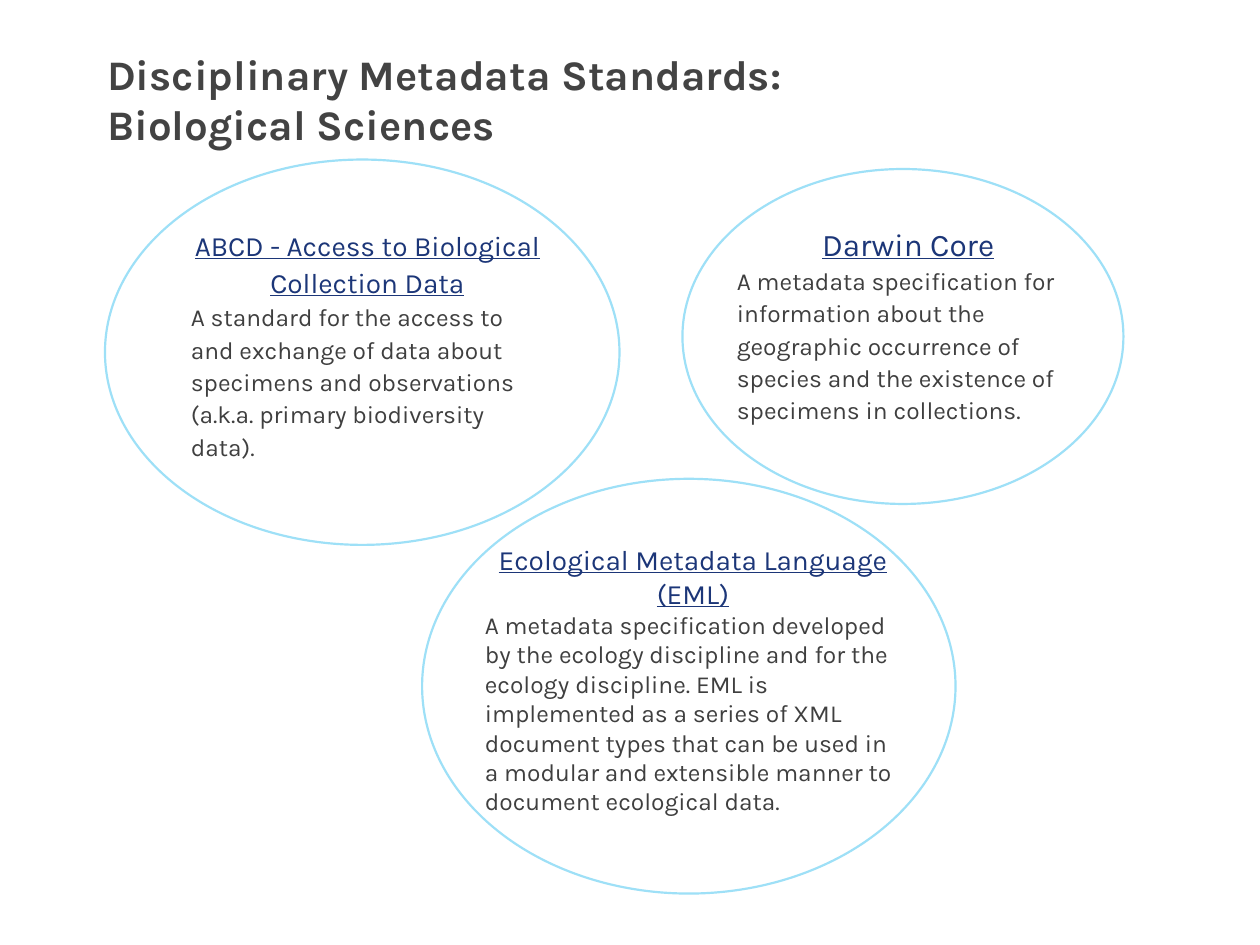
import pptx
import pptx.util
import pptx.dml.color
import pptx.enum.shapes
import pptx.enum.text

RGBColor = pptx.dml.color.RGBColor
ALIGN = pptx.enum.text.PP_ALIGN
GREY = RGBColor(0x43, 0x43, 0x43)
TEXT = RGBColor(0x3F, 0x3F, 0x3F)
NAVY = RGBColor(0x1C, 0x36, 0x78)
SKY = RGBColor(0x9E, 0xE0, 0xF7)

prs = pptx.Presentation()
prs.slide_width = pptx.util.Inches(10)
prs.slide_height = pptx.util.Inches(7.5)
s = prs.slides.add_slide(prs.slide_layouts[5])


def grid(*cells):
    """Lengths on a grid of 120 columns by 90 rows."""
    return [int(prs.slide_width * c / 120) for c in cells]


def write(p, text, size, color, align=ALIGN.LEFT, spacing=1.0, bold=False, underline=False):
    p.alignment = align
    p.line_spacing = spacing
    r = p.add_run()
    r.text = text
    r.font.name = "Karla"
    r.font.size = pptx.util.Pt(size)
    r.font.color.rgb = color
    r.font.bold = bold
    r.font.underline = underline


# Title
sp = s.shapes.title
sp.left, sp.top, sp.width, sp.height = grid(9, 4, 100, 15)
tf = sp.text_frame
tf.auto_size = pptx.enum.text.MSO_AUTO_SIZE.NONE
tf.vertical_anchor = pptx.enum.text.MSO_ANCHOR.TOP
write(tf.paragraphs[0], "Disciplinary Metadata Standards:", 24, GREY, bold=True)
write(tf.add_paragraph(), "Biological Sciences", 24, GREY, bold=True)

# Standards: ellipse, text box, heading, heading size, line spacing, description
standards = [
    ((10, 15.2, 49, 36.7), (17, 20.9, 36, 23.6),
     "ABCD - Access to Biological Collection Data", 16, 1.1,
     "A standard for the access to and exchange of data about specimens and "
     "observations (a.k.a. primary biodiversity data)."),
    ((65, 16.1, 42, 31.9), (69, 20.5, 35, 23.9),
     "Darwin Core", 18, 1.1,
     "A metadata specification for information about the geographic occurrence "
     "of species and the existence of specimens in collections."),
    ((40.2, 45.6, 50.8, 39.5), (45, 51.1, 42, 27.5),
     "Ecological Metadata Language (EML)", 16, 1.0,
     "A metadata specification developed by the ecology discipline and for the "
     "ecology discipline. EML is implemented as a series of XML document types "
     "that can be used in a modular and extensible manner to document ecological data."),
]
for oval, box, heading, size, spacing, description in standards:
    sp = s.shapes.add_shape(pptx.enum.shapes.MSO_SHAPE.OVAL, *grid(*oval))
    sp.shadow.inherit = False
    sp.fill.background()
    sp.line.color.rgb = SKY
    sp.line.width = pptx.util.Pt(1.25)

    tf = s.shapes.add_textbox(*grid(*box)).text_frame
    tf.word_wrap = True
    write(tf.paragraphs[0], heading, size, NAVY, align=ALIGN.CENTER, spacing=spacing, underline=True)
    write(tf.add_paragraph(), description, 14, TEXT, spacing=spacing)

prs.save("out.pptx")
